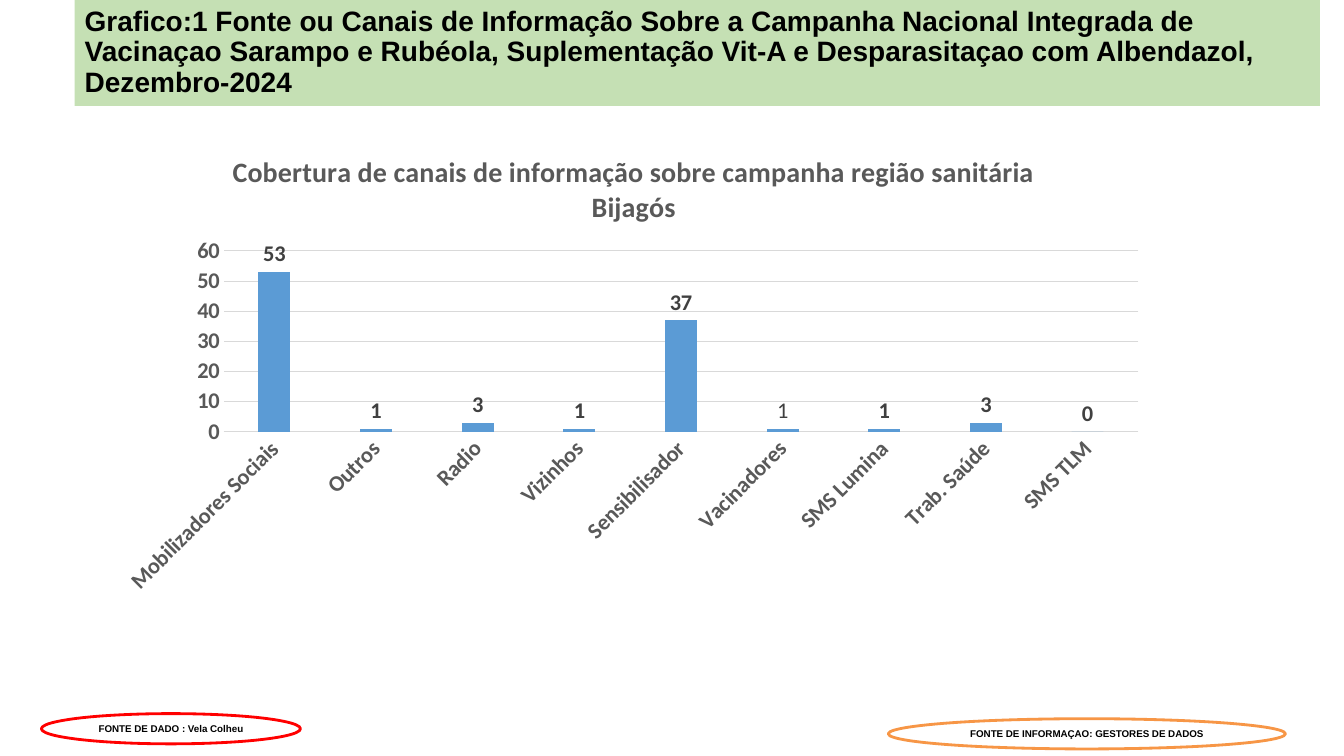
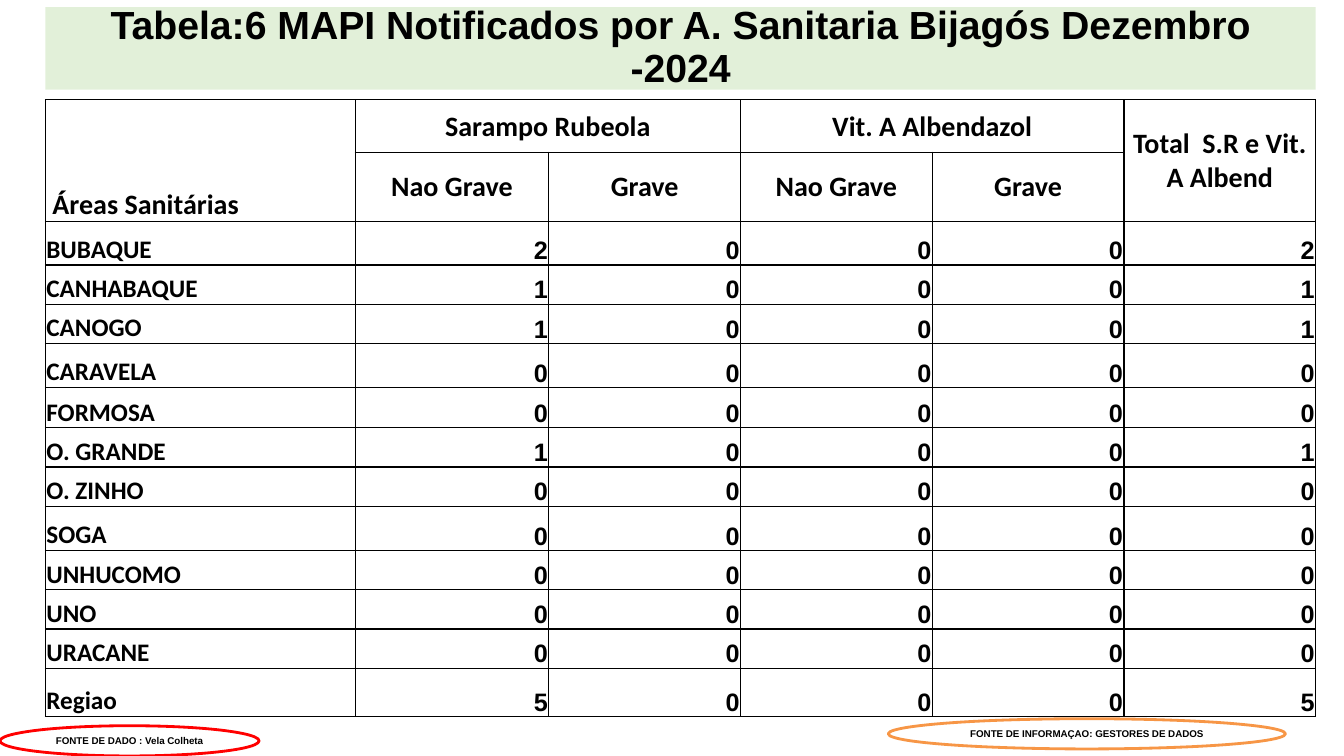
from dataclasses import dataclass
from typing import Optional

from lxml import etree
from pptx import Presentation, util as u
from pptx.chart import data as cd
from pptx.dml.color import RGBColor
from pptx.enum import chart as ch, shapes as sh, text as tx
from pptx.oxml import ns, parse_xml

BLACK = RGBColor(0x00, 0x00, 0x00)
WHITE = RGBColor(0xFF, 0xFF, 0xFF)
RED = RGBColor(0xFF, 0x00, 0x00)
ORANGE = RGBColor(0xF7, 0x96, 0x46)
BLUE = RGBColor(0x5B, 0x9B, 0xD5)
GREEN = RGBColor(0xC5, 0xE0, 0xB4)
PALE = RGBColor(0xE2, 0xF0, 0xD9)
GREY = RGBColor(0x59, 0x59, 0x59)
DARK = RGBColor(0x40, 0x40, 0x40)
RULE = RGBColor(0xD9, 0xD9, 0xD9)
SANS, BODY = "Arial", "Calibri"
WIDE, HIGH = u.Inches(13.33), u.Inches(7.5)
LEFT, MID, RIGHT = tx.PP_ALIGN.LEFT, tx.PP_ALIGN.CENTER, tx.PP_ALIGN.RIGHT
LOW, CORE = tx.MSO_ANCHOR.BOTTOM, tx.MSO_ANCHOR.MIDDLE


@dataclass(frozen=True)
class Box:
    """Place and size in percent of the slide."""
    x: float
    y: float
    w: float
    h: float

    def emu(self) -> tuple[int, int, int, int]:
        return (int(WIDE * self.x / 100), int(HIGH * self.y / 100),
                int(WIDE * self.w / 100), int(HIGH * self.h / 100))


@dataclass(frozen=True)
class Head:
    words: str
    box: Box
    fill: RGBColor
    size: int
    align: tx.PP_ALIGN


@dataclass(frozen=True)
class Badge:
    words: str
    box: Box
    line: RGBColor
    fill: Optional[RGBColor] = None


@dataclass(frozen=True)
class Cell:
    row: int
    col: int
    words: str
    rows: int = 1
    cols: int = 1
    size: int = 20
    face: str = BODY
    align: tx.PP_ALIGN = MID
    anchor: tx.MSO_ANCHOR = CORE
    inset: float = 0.01


HEADS = (
    Head("Grafico:1 Fonte ou Canais de Informação Sobre a Campanha Nacional "
         "Integrada de Vacinaçao Sarampo e Rubéola, Suplementação Vit-A e "
         "Desparasitaçao com Albendazol, Dezembro-2024",
         Box(5.55, 0, 92.65, 14), GREEN, 20, LEFT),
    Head("Tabela:6 MAPI Notificados por A. Sanitaria Bijagós Dezembro -2024",
         Box(3.38, 0.93, 94.52, 10.93), PALE, 28, MID),
)
STAFF = Badge("FONTE DE INFORMAÇAO: GESTORES DE DADOS",
              Box(66.09, 95.07, 29.56, 4), ORANGE, WHITE)
TOOLS = (
    Badge("FONTE DE DADO : Vela Colheu", Box(3.08, 94.4, 19.28, 4), RED),
    Badge("FONTE DE DADO : Vela Colheta", Box(0, 96, 19.28, 4), RED),
)

PLOT = Box(8.03, 17.47, 78.24, 62.93)
TOPIC = "Cobertura de canais de informação sobre campanha região sanitária Bijagós"
MEDIA = {"Mobilizadores Sociais": 53, "Outros": 1, "Radio": 3, "Vizinhos": 1,
         "Sensibilisador": 37, "Vacinadores": 1, "SMS Lumina": 1,
         "Trab. Saúde": 3, "SMS TLM": 0}
THIN = "Vacinadores"

GRID = Box(3.38, 13.2, 94.52, 80.4)
COLS = (3.07, 1.92, 1.9, 1.9, 1.9, 1.9)
ROWS = (0.52, 0.6, 0.43, 0.39, 0.39, 0.44, 0.4, 0.39, 0.39, 0.44, 0.39, 0.39,
        0.39, 0.48)
CASES = {"BUBAQUE": (2, 0, 0, 0), "CANHABAQUE": (1, 0, 0, 0),
         "CANOGO": (1, 0, 0, 0), "CARAVELA": (0, 0, 0, 0),
         "FORMOSA": (0, 0, 0, 0), "O. GRANDE": (1, 0, 0, 0),
         "O. ZINHO": (0, 0, 0, 0), "SOGA": (0, 0, 0, 0),
         "UNHUCOMO": (0, 0, 0, 0), "UNO": (0, 0, 0, 0),
         "URACANE": (0, 0, 0, 0)}
TOPS = (
    Cell(0, 0, "Áreas Sanitárias", rows=2, align=LEFT, anchor=LOW, inset=0.07),
    Cell(0, 1, "Sarampo Rubeola", cols=2),
    Cell(0, 3, "Vit. A Albendazol", cols=2),
    Cell(0, 5, "Total  S.R e Vit. A Albend", rows=2),
    *(Cell(1, col, "Nao Grave" if col % 2 else "Grave") for col in range(1, 5)),
)


def style(font, size: int, color: RGBColor, face: str, bold: bool = True) -> None:
    font.size, font.name, font.bold = u.Pt(size), face, bold
    font.color.rgb = color


def write(frame, words: str, size: int, face: str, align: tx.PP_ALIGN):
    frame.word_wrap = True
    para = frame.paragraphs[0]
    para.text, para.alignment = words, align
    style(para.font, size, BLACK, face)
    return para


def start(deck, head: Head):
    slide = deck.slides.add_slide(deck.slide_layouts.get_by_name("Title Only"))
    title = slide.shapes.title
    title.left, title.top, title.width, title.height = head.box.emu()
    title.fill.solid()
    title.fill.fore_color.rgb = head.fill
    frame = title.text_frame
    frame.auto_size = tx.MSO_AUTO_SIZE.NONE
    frame.vertical_anchor = CORE
    para = write(frame, head.words, head.size, SANS, head.align)
    para.line_spacing, para.space_before = 0.9, u.Pt(0)
    return slide


def stamp(slide, badge: Badge) -> None:
    oval = slide.shapes.add_shape(sh.MSO_SHAPE.OVAL, *badge.box.emu())
    oval.shadow.inherit = False
    if badge.fill is None:
        oval.fill.background()
    else:
        oval.fill.solid()
        oval.fill.fore_color.rgb = badge.fill
    oval.line.color.rgb, oval.line.width = badge.line, u.Pt(2)
    oval.text_frame.vertical_anchor = CORE
    write(oval.text_frame, badge.words, 7, SANS, MID)


def place(area, x: float, y: float, w: float, h: float) -> None:
    for old in area.findall(ns.qn("c:layout")):
        area.remove(old)
    marks = (("layoutTarget", "inner"), ("xMode", "edge"), ("yMode", "edge"),
             ("x", x), ("y", y), ("w", w), ("h", h))
    inner = "".join(f'<c:{tag} val="{val}"/>' for tag, val in marks)
    area.insert(0, parse_xml(f'<c:layout {ns.nsdecls("c")}><c:manualLayout>'
                             f'{inner}</c:manualLayout></c:layout>'))


def rule(line) -> None:
    line.color.rgb, line.width = RULE, u.Pt(0.75)


def graph(slide) -> None:
    data = cd.CategoryChartData()
    data.categories = list(MEDIA)
    data.add_series("Series 1", list(MEDIA.values()))
    chart = slide.shapes.add_chart(ch.XL_CHART_TYPE.COLUMN_CLUSTERED,
                                   *PLOT.emu(), data).chart
    style(chart.font, 16, BLACK, BODY)
    chart.has_legend = False
    chart.has_title = True
    para = chart.chart_title.text_frame.paragraphs[0]
    para.text = TOPIC
    style(para.font, 20, GREY, BODY)
    style(para.runs[0].font, 20, GREY, BODY)

    cats, vals = chart.category_axis, chart.value_axis
    for axis in (cats, vals):
        axis.major_tick_mark = axis.minor_tick_mark = ch.XL_TICK_MARK.NONE
        style(axis.tick_labels.font, 16, GREY, BODY)
    rule(cats.format.line)
    cats.tick_labels.font
    body = cats._element.find(ns.qn("c:txPr")).find(ns.qn("a:bodyPr"))
    body.set("rot", "-2700000")
    body.set("vert", "horz")
    vals.minimum_scale, vals.maximum_scale, vals.major_unit = 0, 60, 10
    vals.format.line.fill.background()
    rule(vals.major_gridlines.format.line)

    plot = chart.plots[0]
    plot.gap_width, plot.overlap, plot.vary_by_categories = 219, -27, False
    bars = plot.series[0]
    bars.format.fill.solid()
    bars.format.fill.fore_color.rgb = BLUE
    thin = bars.points[list(MEDIA).index(THIN)].data_label
    style(thin.font, 16, DARK, BODY, False)
    thin.position = ch.XL_LABEL_POSITION.OUTSIDE_END
    tags = bars.data_labels
    tags.show_value = True
    tags.position = ch.XL_LABEL_POSITION.OUTSIDE_END
    style(tags.font, 16, DARK, BODY)
    place(plot._element.getparent(), 0.11, 0.25, 0.87, 0.38)


def border(cell) -> None:
    props = cell._tc.get_or_add_tcPr()
    for side in ("lnL", "lnR", "lnT", "lnB"):
        line = etree.SubElement(props, ns.qn(f"a:{side}"), w=str(u.Pt(1)))
        fill = etree.SubElement(line, ns.qn("a:solidFill"))
        etree.SubElement(fill, ns.qn("a:srgbClr"), val=str(BLACK))


def fill(table, item: Cell) -> None:
    cell = table.cell(item.row, item.col)
    if item.rows * item.cols > 1:
        cell.merge(table.cell(item.row + item.rows - 1,
                              item.col + item.cols - 1))
    cell.margin_left = u.Inches(item.inset)
    cell.margin_right = cell.margin_top = u.Inches(0.01)
    cell.margin_bottom = 0
    cell.vertical_anchor = item.anchor
    write(cell.text_frame, item.words, item.size, item.face, item.align)


def tally(slide) -> None:
    x, y, w, h = GRID.emu()
    table = slide.shapes.add_table(len(ROWS), len(COLS), x, y, w, h).table
    table.first_row = table.horz_banding = False
    for col, part in zip(table.columns, COLS):
        col.width = int(w * part / sum(COLS))
    for row, part in zip(table.rows, ROWS):
        row.height = int(h * part / sum(ROWS))
    for cell in table.iter_cells():
        border(cell)
        cell.fill.background()
    for item in TOPS:
        fill(table, item)
    sums = tuple(sum(col) for col in zip(*CASES.values()))
    for row, (name, nums) in enumerate({**CASES, "Regiao": sums}.items(), 2):
        fill(table, Cell(row, 0, name, size=18, align=LEFT, anchor=LOW))
        for col, num in enumerate((*nums, sum(nums)), 1):
            fill(table, Cell(row, col, str(num), size=18, face=SANS,
                             align=RIGHT, anchor=LOW))


def main() -> None:
    deck = Presentation()
    deck.slide_width, deck.slide_height = WIDE, HIGH
    for head, draw, tool in zip(HEADS, (graph, tally), TOOLS):
        slide = start(deck, head)
        draw(slide)
        stamp(slide, tool)
        stamp(slide, STAFF)
    deck.save("out.pptx")


if __name__ == "__main__":
    main()
